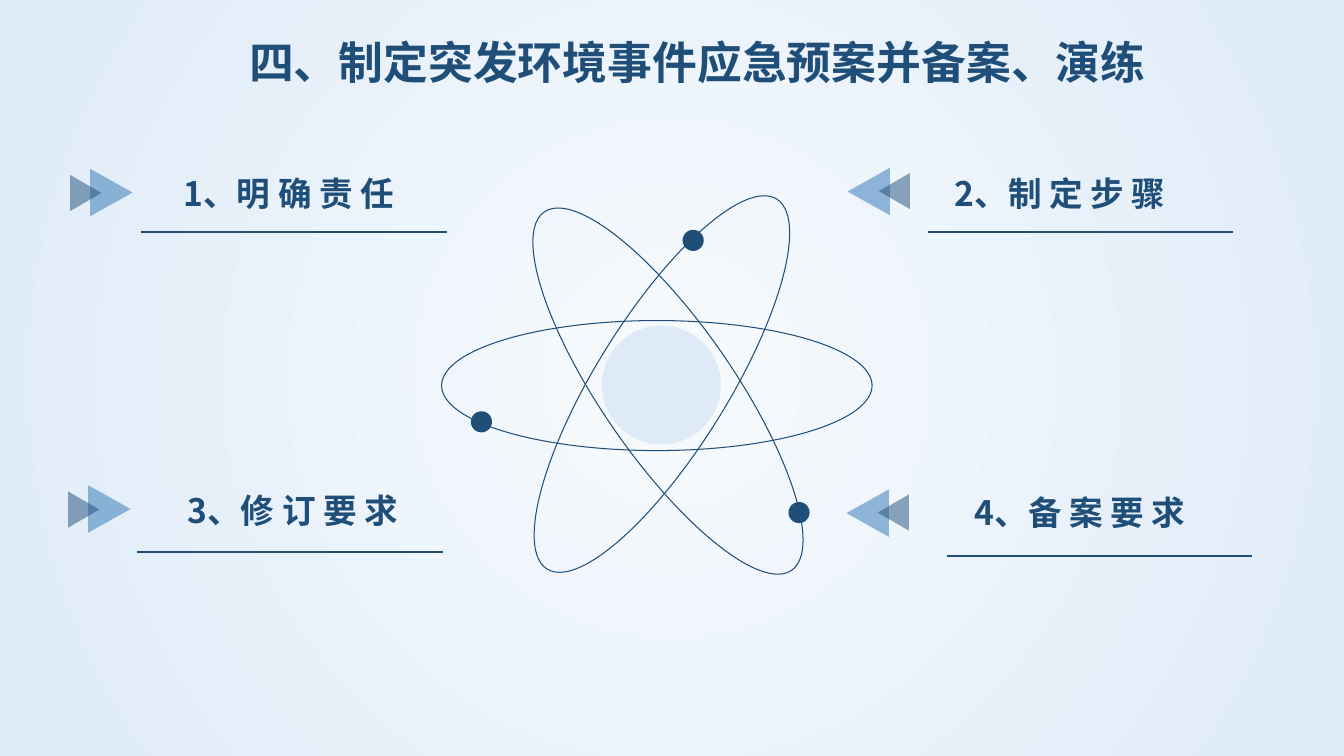
from lxml import etree
from pptx import Presentation
from pptx.dml.color import RGBColor
from pptx.enum.shapes import MSO_CONNECTOR, MSO_SHAPE
from pptx.enum.text import MSO_ANCHOR, MSO_AUTO_SIZE, PP_ALIGN
from pptx.oxml.ns import qn
from pptx.util import Pt

PX = 9144
NAVY, BLUE, PALE, WHITE = "1F4E79", "2E75B6", "DEEBF7", "F7FAFD"
CJK = "Noto Sans CJK SC"
OVAL, TRIANGLE = MSO_SHAPE.OVAL, MSO_SHAPE.ISOSCELES_TRIANGLE
STRAIGHT = MSO_CONNECTOR.STRAIGHT
TOP, LEFT, NO_FIT = MSO_ANCHOR.TOP, PP_ALIGN.LEFT, MSO_AUTO_SIZE.NONE

TITLE = ("四、制定突发环境事件应急预案并备案、演练", (237, 29, 956, 64))
TITLE_FONT = {"name": "Calibri", "size": Pt(32), "bold": True}
LABEL_FONT = {"name": CJK, "size": Pt(24), "bold": True}
ORBITS = [
    ((591, 165, 131, 432), 31.8),
    ((597, 172, 131, 432), 325.4),
    ((587, 169, 129, 427), 270),
]
ELECTRONS = [(677, 228), (782, 498), (467, 408)]
ELECTRON_SIZE = 21
NUCLEUS = (597, 323, 118, 118)
LABELS = [
    {"text": "1、明 确 责 任", "box": (172, 167, 248, 50), "rule": (140, 230),
     "arrow": (87, 170), "turn": 90},
    {"text": "2、制 定 步 骤", "box": (937, 167, 270, 50), "rule": (920, 230),
     "arrow": (838, 169), "turn": 270},
    {"text": "3、修 订 要 求", "box": (176, 481, 289, 50), "rule": (136, 548),
     "arrow": (85, 484), "turn": 90},
    {"text": "4、备 案 要 求", "box": (957, 483, 290, 50), "rule": (939, 552),
     "arrow": (837, 488), "turn": 270},
]
RULE_LENGTH = 303
BIG, SMALL = (47, 42), (36, 31)
SMALL_SHIFT = {90: (-20, 6), 270: (31, 5)}


def rgb(value):
    return RGBColor.from_string(value)


def emu(*lengths):
    return [n * PX for n in lengths]


def add_shape(shapes, kind, box, fill=None, line=None, turn=0, alpha=None):
    sp = shapes.add_shape(kind, *emu(*box))
    sp.shadow.inherit = False
    sp.rotation = turn
    if fill:
        sp.fill.solid()
        sp.fill.fore_color.rgb = rgb(fill)
    else:
        sp.fill.background()
    if line:
        sp.line.color.rgb = rgb(line)
        sp.line.width = Pt(0.75)
    else:
        sp.line.fill.background()
    if alpha:
        color = sp.fill._xPr.find(".//" + qn("a:srgbClr"))
        etree.SubElement(color, qn("a:alpha"), val=str(alpha * 1000))


def write(sp, text, font):
    tf = sp.text_frame
    for key, value in {"word_wrap": True, "auto_size": NO_FIT,
                       "vertical_anchor": TOP}.items():
        setattr(tf, key, value)
    p = tf.paragraphs[0]
    p.alignment = LEFT
    r = p.add_run()
    r.text = text
    for key, value in font.items():
        setattr(r.font, key, value)
    r.font.color.rgb = rgb(NAVY)
    latin = r.font._element.find(qn("a:latin"))
    ea = etree.Element(qn("a:ea"), typeface=CJK)
    latin.addnext(ea)


def paint_background(s):
    fill = s.background.fill
    fill.gradient()
    for stop, color in zip(fill.gradient_stops, (WHITE, PALE)):
        stop.color.rgb = rgb(color)
    grad = s._element.find(".//" + qn("a:gradFill"))
    grad.remove(grad.find(qn("a:lin")))
    circle = etree.SubElement(grad, qn("a:path"), path="circle")
    etree.SubElement(circle, qn("a:fillToRect"),
                     {side: "50000" for side in "ltrb"})


def add_label(s, text, box, rule, arrow, turn):
    x, y = arrow
    dx, dy = SMALL_SHIFT[turn]
    group = s.shapes.add_group_shape().shapes
    add_shape(group, TRIANGLE, (x, y, *BIG), BLUE, turn=turn, alpha=50)
    add_shape(group, TRIANGLE, (x + dx, y + dy, *SMALL), NAVY, turn=turn, alpha=50)
    write(s.shapes.add_textbox(*emu(*box)), text, LABEL_FONT)
    x, y = rule
    line = s.shapes.add_connector(STRAIGHT, *emu(x, y, x + RULE_LENGTH, y))
    line.line.color.rgb = rgb(NAVY)
    line.line.width = Pt(1.5)
    etree.SubElement(line._element.spPr, qn("a:effectLst"))


def main():
    """Build the slide on emergency plans around an atom diagram."""
    prs = Presentation()
    prs.slide_width, prs.slide_height = emu(1333, 750)
    s = prs.slides.add_slide(prs.slide_layouts[5])
    paint_background(s)
    text, box = TITLE
    title = s.shapes.title
    title.left, title.top, title.width, title.height = emu(*box)
    write(title, text, TITLE_FONT)
    for box, turn in ORBITS:
        add_shape(s.shapes, OVAL, box, line=NAVY, turn=turn)
    for x, y in ELECTRONS:
        add_shape(s.shapes, OVAL, (x, y, ELECTRON_SIZE, ELECTRON_SIZE), NAVY)
    add_shape(s.shapes, OVAL, NUCLEUS, PALE)
    for label in LABELS:
        add_label(s, **label)
    prs.save("out.pptx")


if __name__ == "__main__":
    main()
